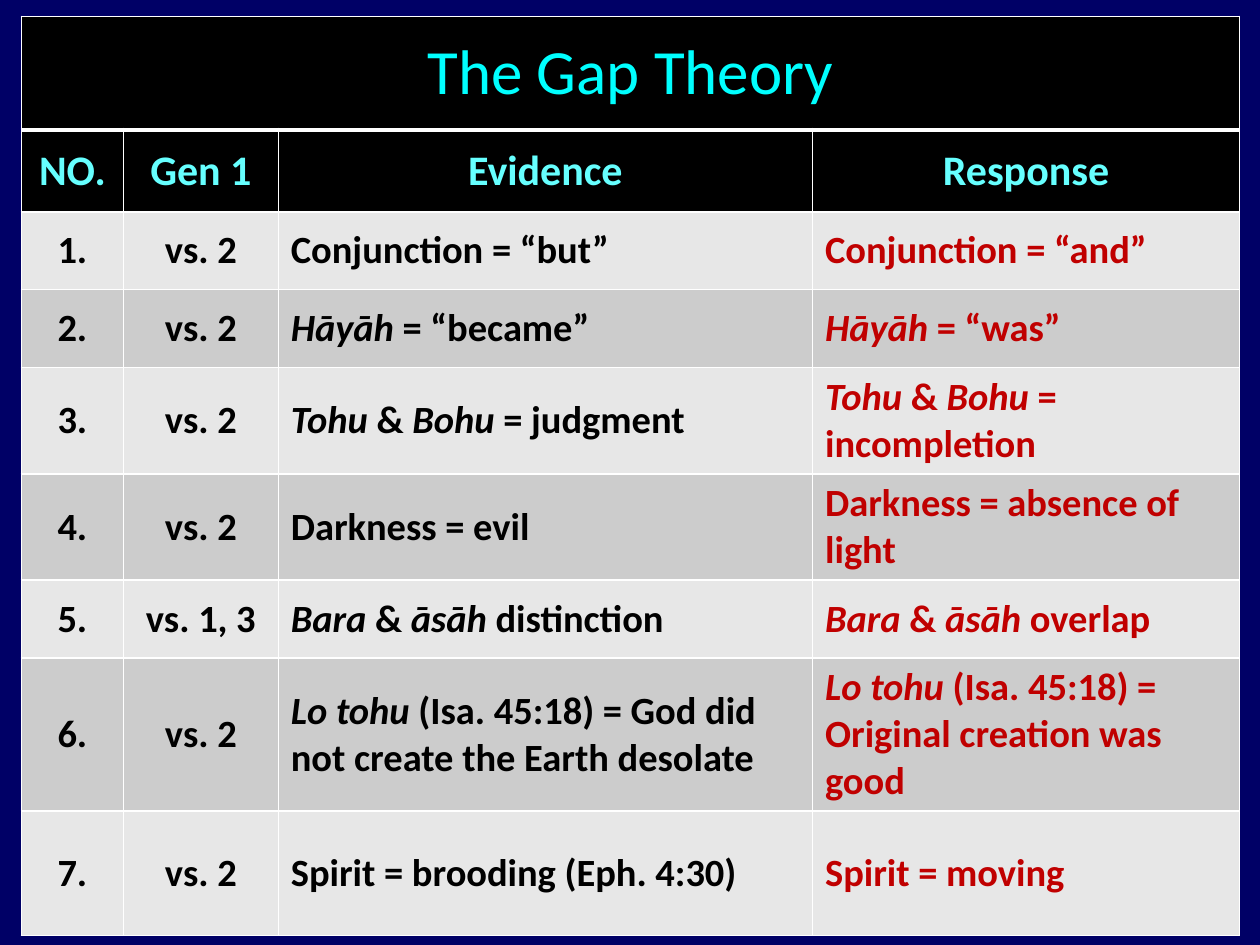
from lxml import etree
from pptx import Presentation
from pptx.dml.color import RGBColor
from pptx.enum.text import MSO_ANCHOR, PP_ALIGN
from pptx.oxml.ns import qn
from pptx.util import Cm, Pt

MIDDLE = MSO_ANCHOR.MIDDLE
CENTER, LEFT = PP_ALIGN.CENTER, PP_ALIGN.LEFT
FONT = "Calibri"
BLANK_LAYOUT = 6

COLORS = {
    "page": "000066",
    "header": "000000",
    "title": "00FFFF",
    "heading": "66FFFF",
    "text": "000000",
    "response": "C00000",
    "light": "E7E7E7",
    "dark": "CCCCCC",
    "border": "FFFFFF",
}

TITLE = "The Gap Theory"
HEADINGS = ["NO.", "Gen 1", "Evidence", "Response"]
ARGUMENTS = [
    ("vs. 2", "Conjunction = “but”", "Conjunction = “and”"),
    ("vs. 2", "*Hāyāh* = “became”", "*Hāyāh* = “was”"),
    ("vs. 2", "*Tohu* & *Bohu* = judgment", "*Tohu* & *Bohu* = incompletion"),
    ("vs. 2", "Darkness = evil", "Darkness = absence of light"),
    ("vs. 1, 3", "*Bara* & *āsāh* distinction", "*Bara* & *āsāh* overlap"),
    ("vs. 2",
     "*Lo tohu* (Isa. 45:18) = God did not create the Earth desolate",
     "*Lo tohu *(Isa. 45:18) = Original creation was good"),
    ("vs. 2", "Spirit = brooding (Eph. 4:30)", "Spirit = moving"),
]

TABLE_BOX = (Cm(0.43), Cm(0.33), Cm(24.56), Cm(18.47))
COLUMN_WIDTHS = [2.06, 3.12, 10.77, 8.61]
ROW_HEIGHTS = [2.29, 1.65, 1.57, 1.57, 2.03, 2.03, 1.57, 3.02, 2.51]


def color(name):
    return RGBColor.from_string(COLORS[name])


def set_borders(cell, top, bottom):
    properties = cell._tc.get_or_add_tcPr()
    for side, width in (("L", 1), ("R", 1), ("T", top), ("B", bottom)):
        line = etree.SubElement(properties, qn(f"a:ln{side}"), w=str(Pt(width)))
        fill = etree.SubElement(line, qn("a:solidFill"))
        etree.SubElement(fill, qn("a:srgbClr"), val=COLORS["border"])


def style_cell(cell, fill, top=1, bottom=1):
    set_borders(cell, top, bottom)
    cell.fill.solid()
    cell.fill.fore_color.rgb = color(fill)
    cell.vertical_anchor = MIDDLE


def write_cell(cell, text, size, ink, align=CENTER, bold=True):
    para = cell.text_frame.paragraphs[0]
    para.alignment = align
    for index, part in enumerate(text.split("*")):
        if part:
            span = para.add_run()
            span.text = part
            span.font.name = FONT
            span.font.size = Pt(size)
            span.font.bold = bold
            span.font.italic = index % 2 == 1
            span.font.color.rgb = color(ink)


def add_theory_table(page, box):
    table = page.shapes.add_table(
        len(ROW_HEIGHTS), len(COLUMN_WIDTHS), *box).table
    for column, width in zip(table.columns, COLUMN_WIDTHS):
        column.width = Cm(width)
    for row, height in zip(table.rows, ROW_HEIGHTS):
        row.height = Cm(height)

    title_row, heading_row, *argument_rows = table.rows
    for cell in title_row.cells:
        style_cell(cell, "header", bottom=3)
    table.cell(0, 0).merge(table.cell(0, len(COLUMN_WIDTHS) - 1))
    write_cell(table.cell(0, 0), TITLE, 36, "title", bold=False)

    for cell, heading in zip(heading_row.cells, HEADINGS):
        style_cell(cell, "header", top=3)
        write_cell(cell, heading, 24, "heading")

    inks = ["text", "text", "text", "response"]
    aligns = [CENTER, CENTER, LEFT, LEFT]
    for number, (row, argument) in enumerate(zip(argument_rows, ARGUMENTS), 1):
        texts = (f"{number}.", *argument)
        for cell, text, ink, align in zip(row.cells, texts, inks, aligns):
            style_cell(cell, "light" if number % 2 else "dark")
            write_cell(cell, text, 22, ink, align)


def main():
    deck = Presentation()
    deck.slide_width, deck.slide_height = Cm(25.4), Cm(19.05)
    page = deck.slides.add_slide(deck.slide_layouts[BLANK_LAYOUT])
    page.background.fill.solid()
    page.background.fill.fore_color.rgb = color("page")
    add_theory_table(page, TABLE_BOX)
    deck.save("out.pptx")


if __name__ == "__main__":
    main()
